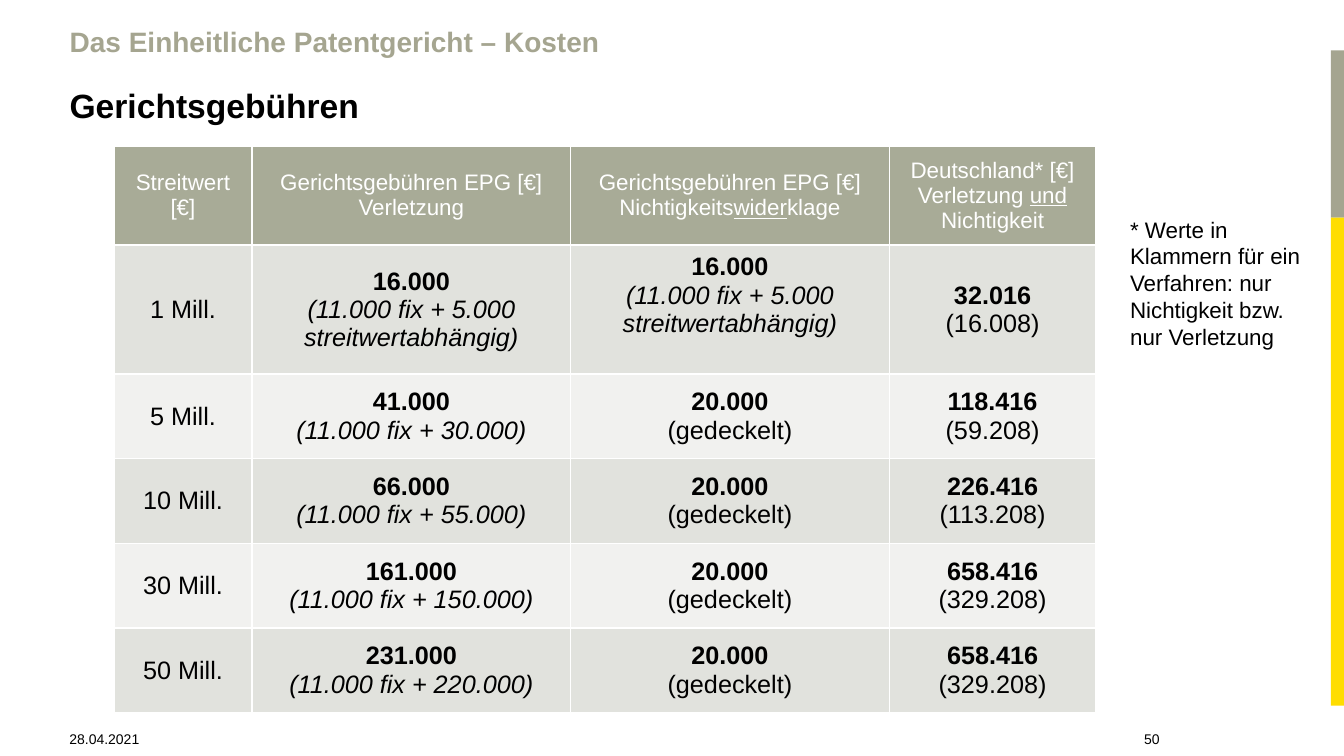
from lxml.etree import SubElement
from pptx import Presentation
from pptx.dml.color import RGBColor
from pptx.enum.shapes import MSO_SHAPE as SHAPE
from pptx.enum.text import MSO_ANCHOR as ANCHOR, MSO_AUTO_SIZE as AUTO, PP_ALIGN as ALIGN
from pptx.oxml.ns import qn
from pptx.util import Inches, Pt

COLORS = {"sage": "A5A590", "yellow": "FFDD00", "header": "A8AB97", "dark": "E1E2DD",
          "light": "F1F1EF", "white": "FFFFFF", "black": "000000"}
COLUMNS = [1.37, 3.16, 3.16, 2.05]
ROWS = [0.98, 1.23, 0.84, 0.84, 0.84, 0.84]
EPG = "Gerichtsgebühren EPG [€]"
HEADERS = [
    [[("Streitwert [€]", "")]],
    [[(EPG, "")], [("Verletzung", "")]],
    [[(EPG, "")], [("Nichtigkeits", ""), ("wider", "u"), ("klage", "")]],
    [[("Deutschland* [€]", "")], [("Verletzung ", ""), ("und", "u"), (" Nichtigkeit", "")]],
]
SPLIT = "(11.000 fix + 5.000 streitwertabhängig)"
CAPPED = ("20.000", "(gedeckelt)", "")
FEES = [
    ("1 Mill.", ("16.000", SPLIT, "i"), ("16.000", SPLIT, "i"), ("32.016", "(16.008)", "")),
    ("5 Mill.", ("41.000", "(11.000 fix + 30.000)", "i"), CAPPED, ("118.416", "(59.208)", "")),
    ("10 Mill.", ("66.000", "(11.000 fix + 55.000)", "i"), CAPPED, ("226.416", "(113.208)", "")),
    ("30 Mill.", ("161.000", "(11.000 fix + 150.000)", "i"), CAPPED, ("658.416", "(329.208)", "")),
    ("50 Mill.", ("231.000", "(11.000 fix + 220.000)", "i"), CAPPED, ("658.416", "(329.208)", "")),
]


class Deck:
    """Holds the style and the current slide."""

    font = "Arial"

    def __init__(self, prs):
        self.slide = prs.slides.add_slide(prs.slide_layouts[5])

    def color(self, name):
        return RGBColor.from_string(COLORS[name])

    def run(self, p, text, size, color="black", marks=""):
        r = p.add_run()
        r.text = text
        f = r.font
        f.name, f.size = self.font, Pt(size)
        f.color.rgb = self.color(color)
        f.bold, f.italic, f.underline = "b" in marks, "i" in marks, "u" in marks

    def bar(self, x, y, w, h, color):
        s = self.slide.shapes.add_shape(SHAPE.RECTANGLE, Inches(x), Inches(y), Inches(w), Inches(h))
        s.shadow.inherit = False
        s.fill.solid()
        s.fill.fore_color.rgb = self.color(color)
        s.line.fill.background()

    def title(self, x, y, w, h, lines):
        s = self.slide.shapes.title
        s.left, s.top, s.width, s.height = Inches(x), Inches(y), Inches(w), Inches(h)
        tf = s.text_frame
        tf.word_wrap, tf.auto_size, tf.vertical_anchor = True, AUTO.NONE, ANCHOR.TOP
        for i, (text, size, color, before) in enumerate(lines):
            p = tf.add_paragraph() if i else tf.paragraphs[0]
            p.alignment, p.line_spacing, p.space_before = ALIGN.LEFT, 0.7, Pt(before)
            self.run(p, text, size, color, "b")

    def text(self, x, y, w, h, text, size, align=ALIGN.LEFT, anchor=ANCHOR.TOP):
        s = self.slide.shapes.add_textbox(Inches(x), Inches(y), Inches(w), Inches(h))
        tf = s.text_frame
        tf.word_wrap, tf.vertical_anchor = True, anchor
        p = tf.paragraphs[0]
        p.alignment = align
        self.run(p, text, size)

    def border(self, cell):
        pr = cell._tc.get_or_add_tcPr()
        for i, side in enumerate(("lnL", "lnR", "lnT", "lnB")):
            ln = pr.makeelement(qn("a:" + side), {"w": str(Pt(1))})
            fill = SubElement(ln, qn("a:solidFill"))
            SubElement(fill, qn("a:srgbClr"), val=COLORS["white"])
            pr.insert(i, ln)

    def cell(self, cell, lines, size, color, fill):
        cell.fill.solid()
        cell.fill.fore_color.rgb = self.color(fill)
        cell.vertical_anchor = ANCHOR.MIDDLE
        self.border(cell)
        tf = cell.text_frame
        for i, runs in enumerate(lines):
            p = tf.add_paragraph() if i else tf.paragraphs[0]
            p.alignment = ALIGN.CENTER
            for text, marks in runs:
                self.run(p, text, size, color, marks)

    def table(self, x, y, widths, heights):
        s = self.slide.shapes.add_table(len(heights), len(widths), Inches(x), Inches(y),
                                        Inches(sum(widths)), Inches(sum(heights)))
        for col, w in zip(s.table.columns, widths):
            col.width = Inches(w)
        for row, h in zip(s.table.rows, heights):
            row.height = Inches(h)
        return s.table


def main():
    prs = Presentation()
    prs.slide_width, prs.slide_height = Inches(13.33), Inches(7.5)
    deck = Deck(prs)
    deck.bar(13.2, 0.5, 0.13, 1.66, "sage")
    deck.bar(13.2, 2.16, 0.13, 4.84, "yellow")
    deck.title(0.59, 0.28, 10.55, 1.1, [
        ("Das Einheitliche Patentgericht – Kosten", 20, "sage", 0),
        ("Gerichtsgebühren", 24, "black", 28),
    ])
    deck.text(0.59, 7.06, 1.09, 0.4, "28.04.2021", 10, anchor=ANCHOR.BOTTOM)
    deck.text(10.55, 7.06, 1.05, 0.4, "50", 10, ALIGN.RIGHT, ANCHOR.BOTTOM)

    table = deck.table(1.13, 1.45, COLUMNS, ROWS)
    for col, lines in enumerate(HEADERS):
        deck.cell(table.cell(0, col), lines, 16, "white", "header")
    for row, (value, *fees) in enumerate(FEES, 1):
        fill = "dark" if row % 2 else "light"
        deck.cell(table.cell(row, 0), [[(value, "")]], 18, "black", fill)
        for col, (total, detail, marks) in enumerate(fees, 1):
            lines = [[(total, "b")], [(detail, marks)]]
            deck.cell(table.cell(row, col), lines, 18, "black", fill)
    table.cell(1, 2).margin_bottom = Inches(0.33)

    deck.text(11.11, 2.09, 1.95, 1.45,
              "* Werte in Klammern für ein Verfahren: nur Nichtigkeit bzw. nur Verletzung", 16)
    prs.save("out.pptx")


if __name__ == "__main__":
    main()
